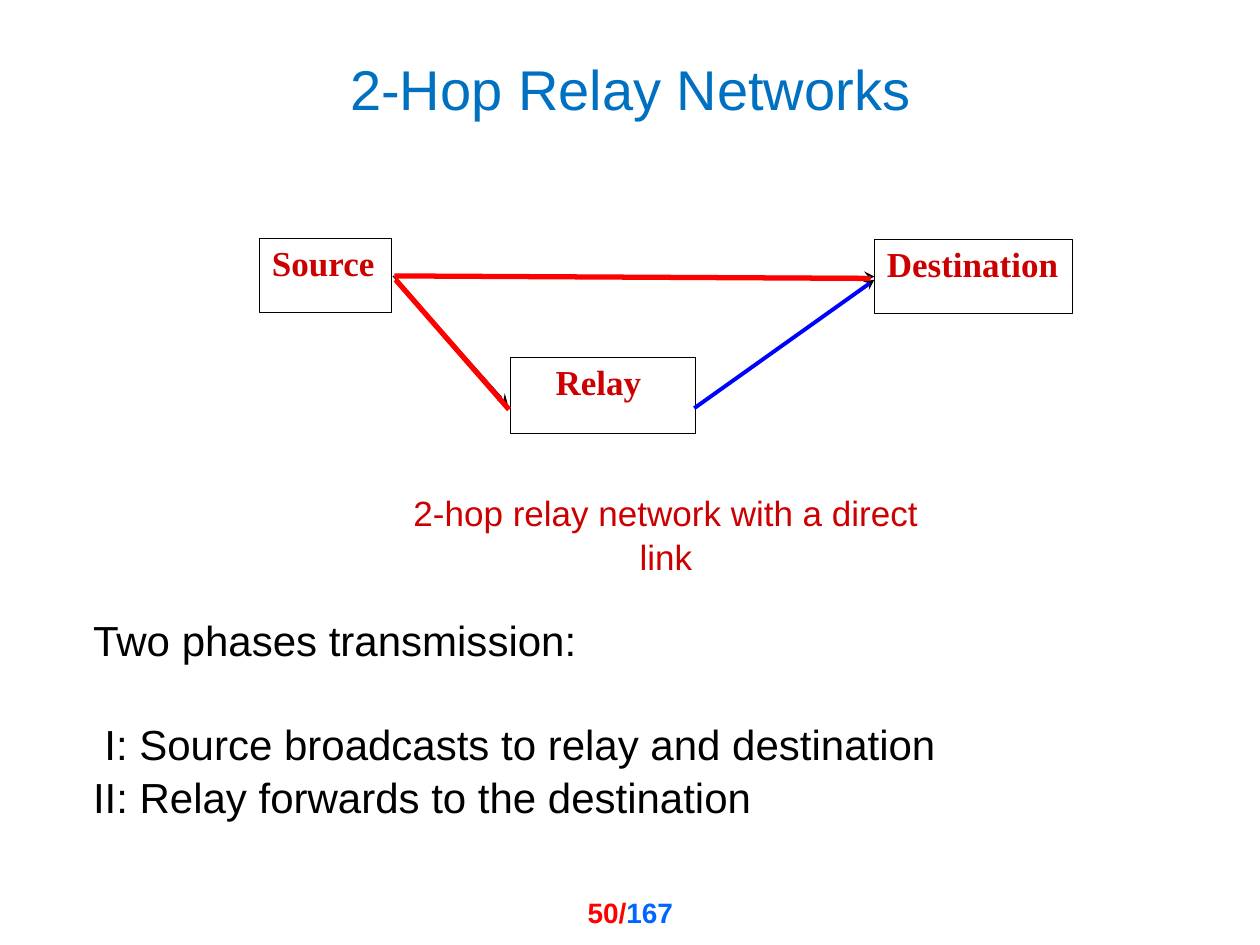
from lxml.etree import SubElement
from pptx import Presentation
from pptx.dml.color import RGBColor
from pptx.enum.shapes import MSO_CONNECTOR, MSO_SHAPE
from pptx.enum.text import MSO_ANCHOR, PP_ALIGN
from pptx.oxml.ns import qn
from pptx.util import Inches, Pt

COLORS = {"black": "000000", "white": "FFFFFF", "title": "0070C0", "label": "CC0000",
          "red": "FF0000", "blue": "0000FF", "total": "0066FF"}

TITLE = "2-Hop Relay Networks"
CAPTION = "2-hop relay network with a direct link"
PAGE = [("50/", "red"), ("167", "total")]
# text, left indent in inches, space before in points
PHASES = [
    ("Two phases transmission:", 0, 0),
    ("I: Source broadcasts to relay and destination", 0.09, 29),
    ("II: Relay forwards to the destination", 0, 0),
]
# label, (left, top, width, height), alignment
NODES = [
    ("Source", (2.06, 1.89, 1.05, 0.59), PP_ALIGN.LEFT),
    ("Destination", (6.94, 1.9, 1.57, 0.59), PP_ALIGN.LEFT),
    ("Relay ", (4.05, 2.84, 1.47, 0.6), PP_ALIGN.CENTER),
]
# start, end, node whose left side the arrow joins
ARROWS = [
    ((3.14, 2.19), (6.94, 2.19), "Destination"),
    ((3.12, 2.19), (4.03, 3.21), None),
    ((5.52, 3.23), (6.94, 2.22), None),
]
# start, end, color, width
PHASE_LINES = [
    ((3.14, 2.22), (4.04, 3.25), "red", 3),
    ((3.13, 2.19), (6.91, 2.21), "red", 3),
    ((5.51, 3.24), (6.9, 2.25), "blue", 2.25),
]

prs = Presentation()
prs.slide_width, prs.slide_height = Inches(10), Inches(7.5)
slide = prs.slides.add_slide(prs.slide_layouts[6])


def rgb(name):
    return RGBColor.from_string(COLORS[name])


def style(font, size, color, face="Arial", bold=False):
    font.name, font.size, font.bold = face, Pt(size), bold
    font.color.rgb = rgb(color)


def add_box(place, anchor=MSO_ANCHOR.MIDDLE):
    frame = slide.shapes.add_textbox(*map(Inches, place)).text_frame
    frame.word_wrap = True
    frame.vertical_anchor = anchor
    return frame


def add_line(start, end, color, width, arrow=False):
    line = slide.shapes.add_connector(MSO_CONNECTOR.STRAIGHT, *map(Inches, start + end))
    line.line.color.rgb = rgb(color)
    line.line.width = Pt(width)
    if arrow:
        SubElement(line.line._get_or_add_ln(), qn("a:tailEnd"), type="stealth")
    SubElement(line._element.spPr, qn("a:effectLst"))
    return line


page = add_box((3.98, 7.06, 1.46, 0.31), MSO_ANCHOR.TOP).paragraphs[0]
page.alignment = PP_ALIGN.RIGHT
for text, color in PAGE:
    run = page.add_run()
    run.text = text
    style(run.font, 16, color, bold=True)

title_frame = add_box((0.24, 0.39, 9.53, 0.62))
title_frame.margin_left = title_frame.margin_right = 0
title_frame.margin_top = title_frame.margin_bottom = 0
title = title_frame.paragraphs[0]
title.text, title.alignment = TITLE, PP_ALIGN.CENTER
style(title.font, 32, "title")

nodes = {}
for label, place, alignment in NODES:
    node = slide.shapes.add_shape(MSO_SHAPE.RECTANGLE, *map(Inches, place))
    node.shadow.inherit = False
    node.fill.solid()
    node.fill.fore_color.rgb = rgb("white")
    node.line.color.rgb = rgb("black")
    node.line.width = Pt(0.75)
    node.text_frame.vertical_anchor = MSO_ANCHOR.TOP
    name = node.text_frame.paragraphs[0]
    name.text, name.alignment, name.line_spacing = label, alignment, 0.95
    style(name.font, 20, "label", "Times New Roman", True)
    nodes[label] = node

for start, end, target in ARROWS:
    arrow = add_line(start, end, "black", 0.75, arrow=True)
    if target:
        arrow.end_connect(nodes[target], 1)

caption = add_box((3.12, 4.02, 4.33, 0.43)).paragraphs[0]
caption.text, caption.alignment, caption.line_spacing = CAPTION, PP_ALIGN.CENTER, 1.05
style(caption.font, 20, "label")

for start, end, color, width in PHASE_LINES:
    add_line(start, end, color, width)

phases = add_box((0.64, 4.75, 7.12, 1.88))
for i, (text, indent, gap) in enumerate(PHASES):
    phase = phases.add_paragraph() if i else phases.paragraphs[0]
    phase.text, phase.line_spacing = text, 1.05
    if indent:
        phase._p.get_or_add_pPr().set("marL", str(Inches(indent)))
    if gap:
        phase.space_before = Pt(gap)
    style(phase.font, 24, "black")

prs.save("out.pptx")
